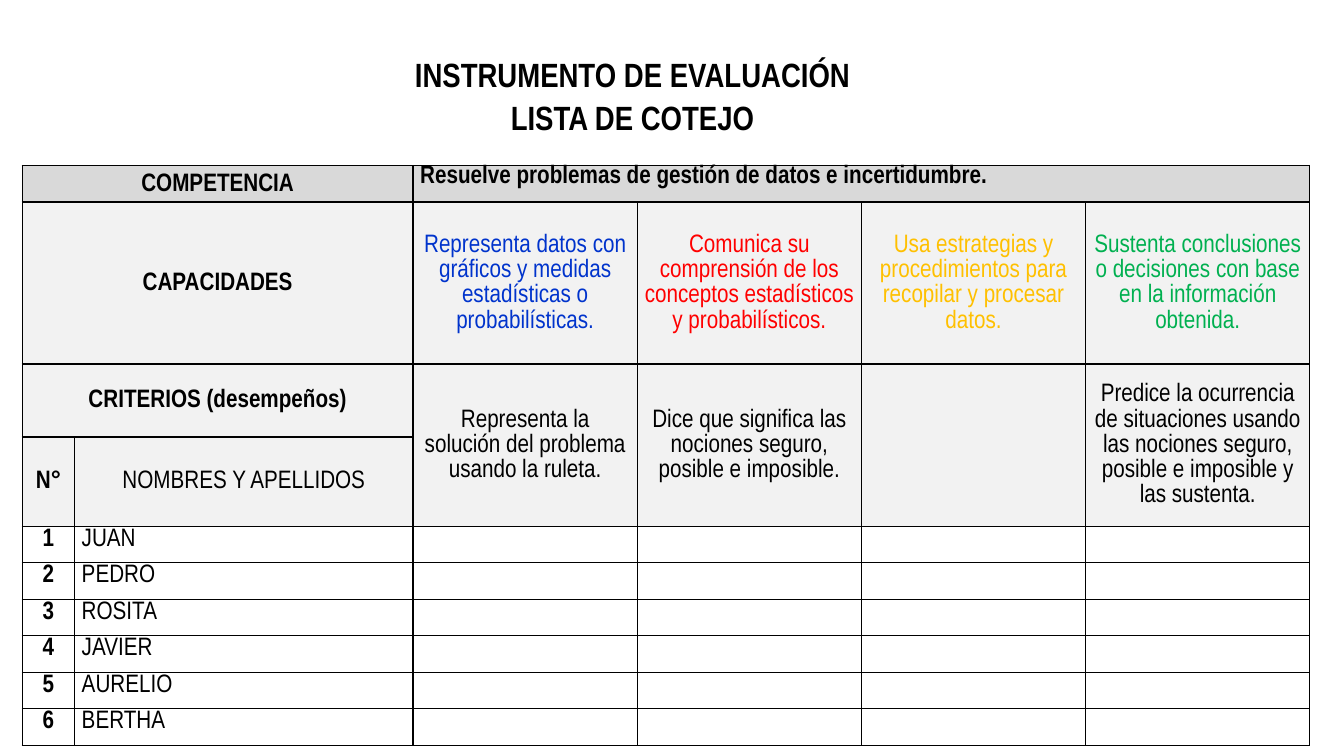
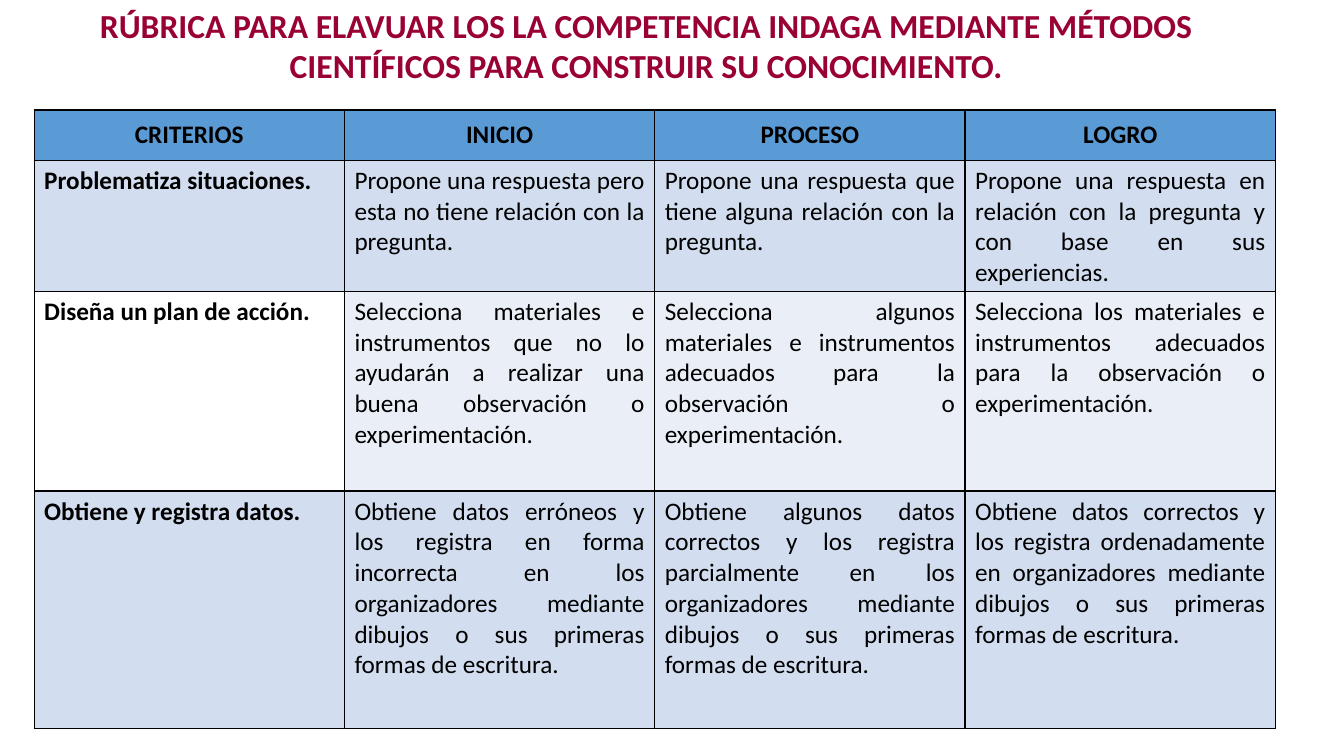
from dataclasses import dataclass

from lxml import etree
from pptx import Presentation
from pptx.dml.color import RGBColor
from pptx.enum.text import MSO_ANCHOR, MSO_AUTO_SIZE, PP_ALIGN
from pptx.oxml.ns import qn
from pptx.util import Cm, Pt

LEFT, CENTER, JUSTIFY = PP_ALIGN.LEFT, PP_ALIGN.CENTER, PP_ALIGN.JUSTIFY
TOP, MIDDLE = MSO_ANCHOR.TOP, MSO_ANCHOR.MIDDLE
BLANK_LAYOUT = 6


@dataclass(frozen=True)
class Theme:
    narrow: str = "Arial Narrow"
    sans: str = "Calibri"
    title_size: int = 24
    cell_size: int = 18
    border_width: int = 1
    loose: float = 1.07
    black: str = "000000"
    white: str = "FFFFFF"
    grey: str = "D9D9D9"
    light_grey: str = "F2F2F2"
    blue: str = "0033CC"
    red: str = "FF0000"
    amber: str = "FFC000"
    green: str = "00B050"
    wine: str = "990033"
    header_blue: str = "5B9BD5"
    band_dark: str = "D2DEEF"
    band_light: str = "EAEFF7"


T = Theme()


# Text
def style_paragraph(p, font, size, color, bold, align, spacing=None):
    p.alignment = align
    if spacing:
        p.line_spacing = spacing
    p.font.name = font
    p.font.size = Pt(size)
    p.font.bold = bold
    p.font.color.rgb = RGBColor.from_string(color)


def add_title(s, lines, box, font, color, spacing=None):
    tf = s.shapes.add_textbox(*map(Cm, box)).text_frame
    tf.word_wrap = True
    tf.auto_size = MSO_AUTO_SIZE.SHAPE_TO_FIT_TEXT
    tf.text = "\n".join(lines)
    for p in tf.paragraphs:
        style_paragraph(p, font, T.title_size, color, True, CENTER, spacing)


# Tables
def add_borders(cell):
    tc_pr = cell._tc.get_or_add_tcPr()
    for side in ("a:lnL", "a:lnR", "a:lnT", "a:lnB"):
        ln = etree.SubElement(tc_pr, qn(side), w=str(Pt(T.border_width)))
        fill = etree.SubElement(ln, qn("a:solidFill"))
        etree.SubElement(fill, qn("a:srgbClr"), val=T.black)


def add_grid(s, left, top, widths, heights):
    frame = s.shapes.add_table(len(heights), len(widths), Cm(left), Cm(top),
                               Cm(sum(widths)), Cm(sum(heights)))
    table = frame.table
    table.first_row = table.horz_banding = False
    for column, width in zip(table.columns, widths):
        column.width = Cm(width)
    for row, height in zip(table.rows, heights):
        row.height = Cm(height)
    for cell in table.iter_cells():
        add_borders(cell)
    return table


def fill_cell(cell, color):
    if color:
        cell.fill.solid()
        cell.fill.fore_color.rgb = RGBColor.from_string(color)
    else:
        cell.fill.background()


def write_cell(cell, text, font, color=T.black, bold=False, align=CENTER,
               anchor=MIDDLE, spacing=None):
    cell.text = text
    cell.vertical_anchor = anchor
    style_paragraph(cell.text_frame.paragraphs[0], font, T.cell_size, color,
                    bold, align, spacing)


# Slide 1: checklist
def add_checklist(s):
    add_title(s, ["INSTRUMENTO DE EVALUACIÓN", "LISTA DE COTEJO"],
              (7.47, 1.17, 16.94, 2.46), T.narrow, T.black, T.loose)
    capacities = [
        ("Representa datos con gráficos y medidas estadísticas o probabilísticas.", T.blue),
        ("Comunica su comprensión de los conceptos estadísticos y probabilísticos.", T.red),
        ("Usa estrategias y procedimientos para recopilar y procesar datos.", T.amber),
        ("Sustenta conclusiones o decisiones con base en la información obtenida.", T.green),
    ]
    criteria = [
        "Representa la solución del problema usando la ruleta.",
        "Dice que significa las nociones seguro, posible e imposible.",
        "",
        "Predice la ocurrencia de situaciones usando las nociones seguro, "
        "posible e imposible y las sustenta.",
    ]
    names = ["JUAN", "PEDRO", "ROSITA", "JAVIER", "AURELIO", "BERTHA"]
    first_name_row = 4
    table = add_grid(s, 0.56, 4.17, [1.32, 8.53] + [5.65] * 4,
                     [0.92, 4.08, 1.84, 2.25] + [0.92] * len(names))

    # Base look of every cell
    row_fills = [T.grey] + [T.light_grey] * 3 + [T.white] * len(names)
    for row, color in zip(table.rows, row_fills):
        for cell in row.cells:
            fill_cell(cell, color)
            cell.margin_left = cell.margin_right = Cm(0.18)
            cell.margin_top = cell.margin_bottom = 0
            write_cell(cell, "", T.narrow)

    def put(row, col, text, **look):
        write_cell(table.cell(row, col), text, T.narrow,
                   **{"spacing": T.loose, **look})

    # Headings
    for row, label in enumerate(["COMPETENCIA", "CAPACIDADES", "CRITERIOS (desempeños)"]):
        table.cell(row, 0).merge(table.cell(row, 1))
        put(row, 0, label, bold=True)
    table.cell(0, 2).merge(table.cell(0, 5))
    put(0, 2, "Resuelve problemas de gestión de datos e incertidumbre.",
        bold=True, align=JUSTIFY, anchor=TOP, spacing=None)
    for col, ((capacity, color), criterion) in enumerate(zip(capacities, criteria), 2):
        put(1, col, capacity, color=color)
        table.cell(2, col).merge(table.cell(3, col))
        put(2, col, criterion)
    put(3, 0, "N°", bold=True)
    put(3, 1, "NOMBRES Y APELLIDOS")

    # Pupils
    for number, name in enumerate(names, 1):
        row = first_name_row + number - 1
        put(row, 0, str(number), bold=True, anchor=TOP)
        put(row, 1, name, align=LEFT, anchor=TOP)


# Slide 2: rubric
def add_rubric(s):
    add_title(s, ["RÚBRICA PARA ELAVUAR LOS LA COMPETENCIA INDAGA MEDIANTE MÉTODOS "
                  "CIENTÍFICOS PARA CONSTRUIR SU CONOCIMIENTO."],
              (0.41, 0, 31.75, 2.31), T.sans, T.wine)
    headings = ["CRITERIOS", "INICIO", "PROCESO", "LOGRO"]
    # Each row: fill of the criterion, fill of the levels, texts
    rows = [
        (T.band_dark, T.band_dark, [
            "Problematiza situaciones.",
            "Propone una respuesta pero esta no tiene relación con la pregunta.",
            "Propone una respuesta que tiene alguna relación con la pregunta.",
            "Propone una respuesta en relación con la pregunta y con base en sus "
            "experiencias."]),
        (None, T.band_light, [
            "Diseña un plan de acción.",
            "Selecciona materiales e instrumentos que no lo ayudarán a realizar una "
            "buena observación o experimentación.",
            "Selecciona algunos materiales e instrumentos adecuados para la "
            "observación o experimentación.",
            "Selecciona los materiales e instrumentos adecuados para la observación "
            "o experimentación."]),
        (T.band_dark, T.band_dark, [
            "Obtiene y registra datos.",
            "Obtiene datos erróneos y los registra en forma incorrecta en los "
            "organizadores mediante dibujos o sus primeras formas de escritura.",
            "Obtiene algunos datos correctos y los registra parcialmente en los "
            "organizadores mediante dibujos o sus primeras formas de escritura.",
            "Obtiene datos correctos y los registra ordenadamente en organizadores "
            "mediante dibujos o sus primeras formas de escritura."]),
    ]
    table = add_grid(s, 0.86, 2.77, [7.82] * 4, [1.27, 3.3, 5.03, 5.99])
    for cell, heading in zip(table.rows[0].cells, headings):
        fill_cell(cell, T.header_blue)
        write_cell(cell, heading, T.sans, bold=True)
    for row, (criterion_fill, level_fill, texts) in enumerate(rows, 1):
        for col, text in enumerate(texts):
            is_criterion = col == 0
            cell = table.cell(row, col)
            fill_cell(cell, criterion_fill if is_criterion else level_fill)
            write_cell(cell, text, T.sans, bold=is_criterion, anchor=TOP,
                       align=LEFT if is_criterion else JUSTIFY)


def main():
    prs = Presentation()
    prs.slide_width, prs.slide_height = Cm(33.87), Cm(19.05)
    for build in (add_checklist, add_rubric):
        build(prs.slides.add_slide(prs.slide_layouts[BLANK_LAYOUT]))
    prs.save("out.pptx")


if __name__ == "__main__":
    main()
